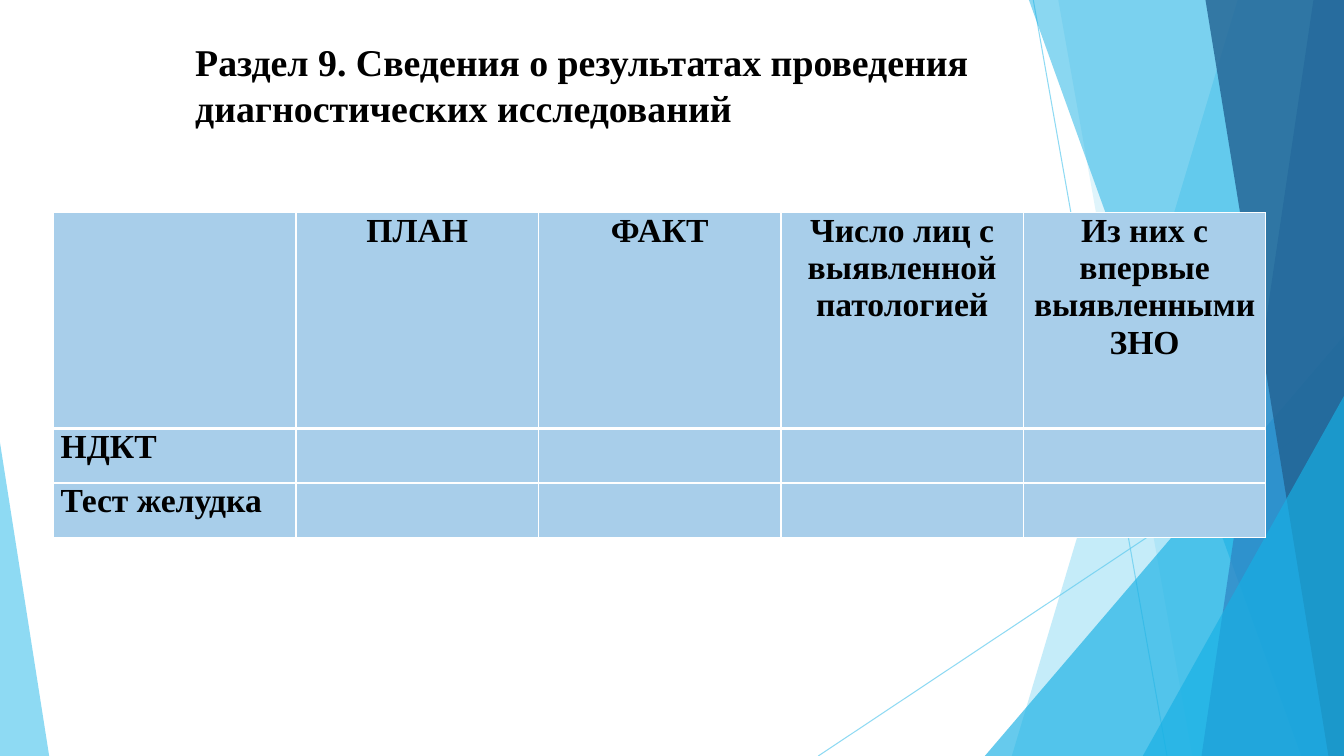
from lxml.etree import SubElement
from pptx import Presentation
from pptx.dml.color import RGBColor
from pptx.enum.shapes import MSO_CONNECTOR, MSO_SHAPE
from pptx.enum.text import MSO_ANCHOR, PP_ALIGN
from pptx.oxml import parse_xml
from pptx.oxml.ns import nsdecls, qn
from pptx.util import Cm, Pt

WIDTH, HEIGHT = 33.87, 19.05
FONT = "Times New Roman"
COLORS = {"sky": "5FCBEF", "azure": "17B0E4", "blue": "2E83C3", "navy": "226292",
          "cell": "A8CEEA", "border": "FFFFFF", "text": "000000"}

TITLE = "Раздел 9. Сведения о результатах проведения диагностических исследований"
TABLE = [
    ["", "ПЛАН", "ФАКТ", "Число лиц с выявленной патологией", "Из них с впервые выявленными ЗНО"],
    ["НДКТ", "", "", "", ""],
    ["Тест желудка", "", "", "", ""],
]
COLUMN_WIDTH = 6.11
ROW_HEIGHTS = [5.44, 1.37, 1.37]

RAYS = [((26.04, 0), (29.41, HEIGHT)), ((WIDTH, 10.24), (20.62, HEIGHT))]
# Back to front. Band: top x, bottom x. Triangle: left, top, width, apex position.
DECORATIONS = [
    ("band", (31.19, 25.5), "sky", 36),
    ("band", (26.67, 30.05), "sky", 20),
    ("triangle", (24.82, 8.46, 9.05, 1), "azure", 66),
    ("band", (25.93, 32.79), "azure", 50),
    ("band", (33.1, 30.28), "blue", 70),
    ("band", (30.38, 33.48), "navy", 80),
    ("triangle", (28.8, 9.98, 5.07, 1), "azure", 66),
    ("triangle", (0, 11.15, 1.24, 0), "sky", 70),
]


def rgb(name):
    return RGBColor.from_string(COLORS[name])


def set_opacity(parent, percent):
    color = next(parent.iter(qn("a:srgbClr")))
    SubElement(color, qn("a:alpha")).set("val", str(percent * 1000))


def add_ray(slide, start, end):
    line = slide.shapes.add_connector(MSO_CONNECTOR.STRAIGHT, *map(Cm, start + end))
    line.line.color.rgb = rgb("sky")
    line.line.width = Pt(0.75)
    properties = line.element.spPr
    set_opacity(properties, 70)
    SubElement(properties, qn("a:effectLst"))


def add_band(slide, top_x, bottom_x):
    """Add an area from a slanted left edge to the right edge of the slide."""
    builder = slide.shapes.build_freeform(Cm(top_x), Cm(0))
    corners = [(WIDTH, 0), (WIDTH, HEIGHT), (bottom_x, HEIGHT)]
    builder.add_line_segments([(Cm(x), Cm(y)) for x, y in corners], close=True)
    return builder.convert_to_shape()


def add_triangle(slide, left, top, width, apex):
    shape = slide.shapes.add_shape(MSO_SHAPE.ISOSCELES_TRIANGLE, Cm(left), Cm(top),
                                   Cm(width), Cm(HEIGHT - top))
    shape.adjustments[0] = apex
    return shape


def add_decorations(slide):
    for start, end in RAYS:
        add_ray(slide, start, end)
    builders = {"band": add_band, "triangle": add_triangle}
    for kind, geometry, color, opacity in DECORATIONS:
        shape = builders[kind](slide, *geometry)
        shape.shadow.inherit = False
        shape.fill.solid()
        shape.fill.fore_color.rgb = rgb(color)
        set_opacity(shape.element.spPr, opacity)
        shape.line.fill.background()


def write(text_frame, text, size, align=PP_ALIGN.LEFT):
    paragraph = text_frame.paragraphs[0]
    paragraph.alignment = align
    run = paragraph.add_run()
    run.text = text
    run.font.name = FONT
    run.font.size = Pt(size)
    run.font.bold = True
    run.font.color.rgb = rgb("text")


def set_borders(cell, **widths):
    """Give each named side (L, R, T, B) a line of that width in points."""
    properties = cell._tc.get_or_add_tcPr()
    for index, (side, width) in enumerate(widths.items()):
        properties.insert(index, parse_xml(
            f'<a:ln{side} {nsdecls("a")} w="{Pt(width)}"><a:solidFill>'
            f'<a:srgbClr val="{COLORS["border"]}"/></a:solidFill></a:ln{side}>'))


def add_title(slide):
    box = slide.shapes.add_textbox(Cm(4.67), Cm(0.86), Cm(23.88), Cm(3.66))
    box.text_frame.word_wrap = True
    box.text_frame.vertical_anchor = MSO_ANCHOR.TOP
    write(box.text_frame, TITLE, size=27)


def add_results_table(slide):
    rows, columns = len(TABLE), len(TABLE[0])
    table = slide.shapes.add_table(rows, columns, Cm(1.35), Cm(5.36),
                                   Cm(COLUMN_WIDTH * columns), Cm(sum(ROW_HEIGHTS))).table
    for column in table.columns:
        column.width = Cm(COLUMN_WIDTH)
    for index, (height, texts) in enumerate(zip(ROW_HEIGHTS, TABLE)):
        table.rows[index].height = Cm(height)
        for cell, text in zip(table.rows[index].cells, texts):
            cell.fill.solid()
            cell.fill.fore_color.rgb = rgb("cell")
            set_borders(cell, L=1, R=1, T=3 if index == 1 else 1, B=3 if index == 0 else 1)
            cell.margin_left = cell.margin_right = Cm(0.18)
            cell.margin_top = cell.margin_bottom = Cm(0)
            if text:
                write(cell.text_frame, text, size=24,
                      align=PP_ALIGN.CENTER if index == 0 else PP_ALIGN.LEFT)


def main():
    presentation = Presentation()
    presentation.slide_width, presentation.slide_height = Cm(WIDTH), Cm(HEIGHT)
    slide = presentation.slides.add_slide(presentation.slide_layouts[6])
    add_decorations(slide)
    add_title(slide)
    add_results_table(slide)
    presentation.save("out.pptx")


if __name__ == "__main__":
    main()
